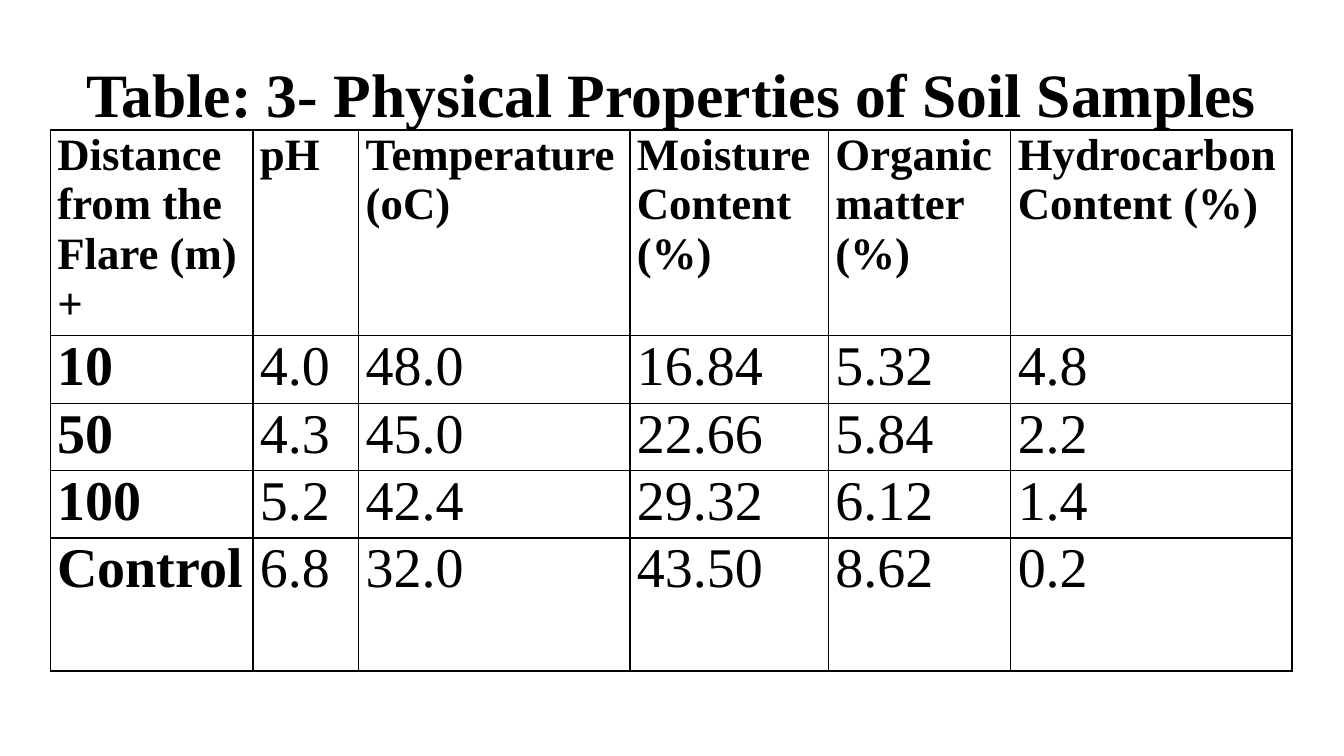
from lxml import etree
from pptx import Presentation
from pptx.dml.color import RGBColor
from pptx.enum.text import MSO_ANCHOR, PP_ALIGN
from pptx.oxml.ns import qn
from pptx.util import Pt

CENTER = PP_ALIGN.CENTER
MIDDLE = MSO_ANCHOR.MIDDLE
FONT = "Times New Roman"
COLORS = {"text": "000000", "border": "080000"}

WIDTHS = [144.7, 75.6, 193.7, 141.8, 130.3, 200.9]
HEIGHTS = [146.9, 48.2, 48.2, 48.2, 95]
ROWS = [
    ["Distance from the Flare (m) +", "pH", "Temperature (oC)",
     "Moisture Content (%)", "Organic matter (%)", "Hydrocarbon Content (%)"],
    ["10", "4.0", "48.0", "16.84", "5.32", "4.8"],
    ["50", "4.3", "45.0", "22.66", "5.84", "2.2"],
    ["100", "5.2", "42.4", "29.32", "6.12", "1.4"],
    ["Control", "6.8", "32.0", "43.50", "8.62", "0.2"],
]


def write(frame, text, size, bold):
    para = frame.paragraphs[0]
    run = para.add_run()
    run.text = text
    style = {"name": FONT, "size": Pt(size), "bold": bold}
    for key, value in style.items():
        setattr(run.font, key, value)
    run.font.color.rgb = RGBColor.from_string(COLORS["text"])
    return para


def frame_cell(cell):
    """Draw a thin line on all four sides and leave the cell unfilled."""
    props = cell._tc.get_or_add_tcPr()
    for side in ("a:lnL", "a:lnR", "a:lnT", "a:lnB"):
        line = etree.SubElement(props, qn(side), w=str(Pt(1)))
        fill = etree.SubElement(line, qn("a:solidFill"))
        etree.SubElement(fill, qn("a:srgbClr"), val=COLORS["border"])
    cell.fill.background()


deck = Presentation()
deck.slide_width, deck.slide_height = Pt(960), Pt(540)
slide = deck.slides.add_slide(deck.slide_layouts[6])

# Table
grid = slide.shapes.add_table(
    len(ROWS), len(WIDTHS), Pt(36), Pt(92.9), Pt(sum(WIDTHS)), Pt(sum(HEIGHTS))
).table
grid.horz_banding = False
for col, width in zip(grid.columns, WIDTHS):
    col.width = Pt(width)
for row, height in zip(grid.rows, HEIGHTS):
    row.height = Pt(height)

margins = {"margin_left": Pt(5), "margin_right": Pt(5),
           "margin_top": 0, "margin_bottom": 0}
for r, row in enumerate(ROWS):
    for c, text in enumerate(row):
        cell = grid.cell(r, c)
        for key, value in margins.items():
            setattr(cell, key, value)
        write(cell.text_frame, text, 40 if r else 32, r == 0 or c == 0)
        frame_cell(cell)

# Title
title = slide.shapes.add_textbox(Pt(48), Pt(21.6), Pt(864), Pt(90)).text_frame
title.word_wrap = True
title.vertical_anchor = MIDDLE
write(title, "Table: 3- Physical Properties of Soil Samples", 44, True).alignment = CENTER

deck.save("out.pptx")
